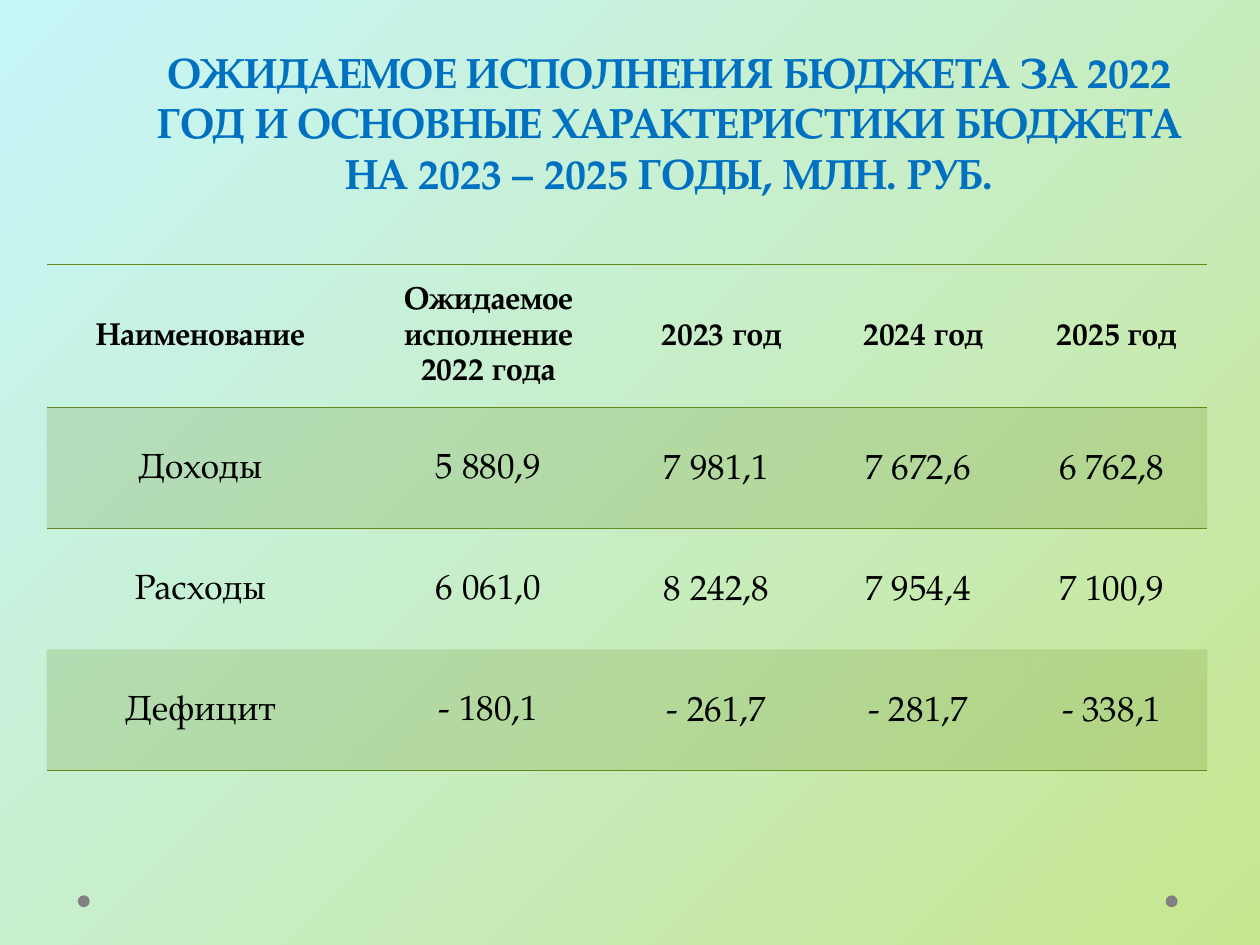
from lxml.etree import SubElement
from pptx import Presentation
from pptx.dml.color import RGBColor
from pptx.enum.shapes import MSO_SHAPE as Shape
from pptx.enum.text import MSO_ANCHOR as Anchor, MSO_AUTO_SIZE as AutoSize, PP_ALIGN as Align
from pptx.oxml.ns import qn
from pptx.util import Cm, Pt

FONT = "TeX Gyre Pagella"
SKY = RGBColor(0xC7, 0xF6, 0xFB)
LIME = RGBColor(0xC7, 0xE6, 0x8F)
BLUE = RGBColor(0x00, 0x70, 0xC0)
GREEN = RGBColor(0x63, 0x89, 0x1F)
GREY = RGBColor(0x80, 0x80, 0x80)
BLACK = RGBColor(0, 0, 0)
PLAIN_STYLE = "{2D5ABB26-0587-4C30-8999-92F81FD0307C}"

TITLE = ("ОЖИДАЕМОЕ ИСПОЛНЕНИЯ БЮДЖЕТА ЗА 2022 ГОД И ОСНОВНЫЕ "
         "ХАРАКТЕРИСТИКИ БЮДЖЕТА НА 2023 – 2025 ГОДЫ, МЛН. РУБ.")
BUDGET = [
    ["Наименование", "Ожидаемое исполнение\n2022 года", "2023 год", "2024 год", "2025 год"],
    ["Доходы", "5 880,9", "7 981,1", "7 672,6", "6 762,8"],
    ["Расходы", "6 061,0", "8 242,8", "7 954,4", "7 100,9"],
    ["Дефицит", "- 180,1", "- 261,7", "- 281,7", "- 338,1"],
]
COLUMN_WIDTHS = [6.2, 5.41, 3.99, 4.14, 3.66]
HEADER_HEIGHT, ROW_HEIGHT = 2.88, 2.44


def paint_background(slide):
    fill = slide.background.fill
    fill.gradient()
    fill.gradient_angle = 315
    for stop, color, position in zip(fill.gradient_stops, (SKY, LIME), (0, 1)):
        stop.color.rgb = color
        stop.position = position


def write(paragraph, text, size, color, bold):
    paragraph.alignment = Align.CENTER
    for number, line in enumerate(text.split("\n")):
        if number:
            paragraph.add_line_break()
        run = paragraph.add_run()
        run.text = line
        run.font.name = FONT
        run.font.size = Pt(size)
        run.font.bold = bold
        run.font.color.rgb = color


def add_title(slide):
    title = slide.shapes.title
    title.left, title.top, title.width, title.height = Cm(2.9), Cm(0.79), Cm(21.2), Cm(3.33)
    frame = title.text_frame
    frame.word_wrap = True
    frame.auto_size = AutoSize.SHAPE_TO_FIT_TEXT
    frame.vertical_anchor = Anchor.MIDDLE
    write(frame.paragraphs[0], TITLE, 24, BLUE, True)


def add_dot(slide, left):
    dot = slide.shapes.add_shape(Shape.OVAL, Cm(left), Cm(18.05), Cm(0.24), Cm(0.24))
    dot.shadow.inherit = False
    dot.fill.solid()
    dot.fill.fore_color.rgb = GREY
    dot.line.fill.background()


def add_border(cell, side):
    border = SubElement(cell._tc.get_or_add_tcPr(), qn(f"a:{side}"), w=str(Pt(1)))
    SubElement(SubElement(border, qn("a:solidFill")), qn("a:srgbClr"), val=str(GREEN))


def tint(cell):
    cell.fill.solid()
    cell.fill.fore_color.rgb = GREEN
    color = cell._tc.tcPr.find(qn("a:solidFill")).find(qn("a:srgbClr"))
    SubElement(color, qn("a:alpha"), val="20000")


def format_cell(cell, text, row, column):
    is_header = row == 0
    cell.vertical_anchor = Anchor.MIDDLE
    if not is_header and column >= 2:
        cell.margin_left = cell.margin_top = Cm(0.03)
        cell.margin_right, cell.margin_bottom = Cm(0.23), 0
    if row <= 1:
        add_border(cell, "lnT")
    if row in (0, len(BUDGET) - 1):
        add_border(cell, "lnB")
    if row % 2:
        tint(cell)
    else:
        cell.fill.background()
    paragraph = cell.text_frame.paragraphs[0]
    paragraph.line_spacing = 1.15
    write(paragraph, text, 18 if is_header else 20, BLACK, is_header)


def add_budget_table(slide):
    heights = [HEADER_HEIGHT] + [ROW_HEIGHT] * (len(BUDGET) - 1)
    frame = slide.shapes.add_table(
        len(BUDGET), len(COLUMN_WIDTHS), Cm(0.94), Cm(5.33),
        Cm(sum(COLUMN_WIDTHS)), Cm(sum(heights)))
    table = frame.table
    table.horz_banding = False
    for style in frame.element.iter(qn("a:tableStyleId")):
        style.text = PLAIN_STYLE
    for column, width in zip(table.columns, COLUMN_WIDTHS):
        column.width = Cm(width)
    for row, height in zip(table.rows, heights):
        row.height = Cm(height)
    for row, values in enumerate(BUDGET):
        for column, text in enumerate(values):
            format_cell(table.cell(row, column), text, row, column)


def main():
    deck = Presentation()
    deck.slide_width, deck.slide_height = Cm(25.4), Cm(19.05)
    slide = deck.slides.add_slide(deck.slide_layouts[5])
    paint_background(slide)
    for left in (23.5, 1.57):
        add_dot(slide, left)
    add_title(slide)
    add_budget_table(slide)
    deck.save("out.pptx")


if __name__ == "__main__":
    main()
